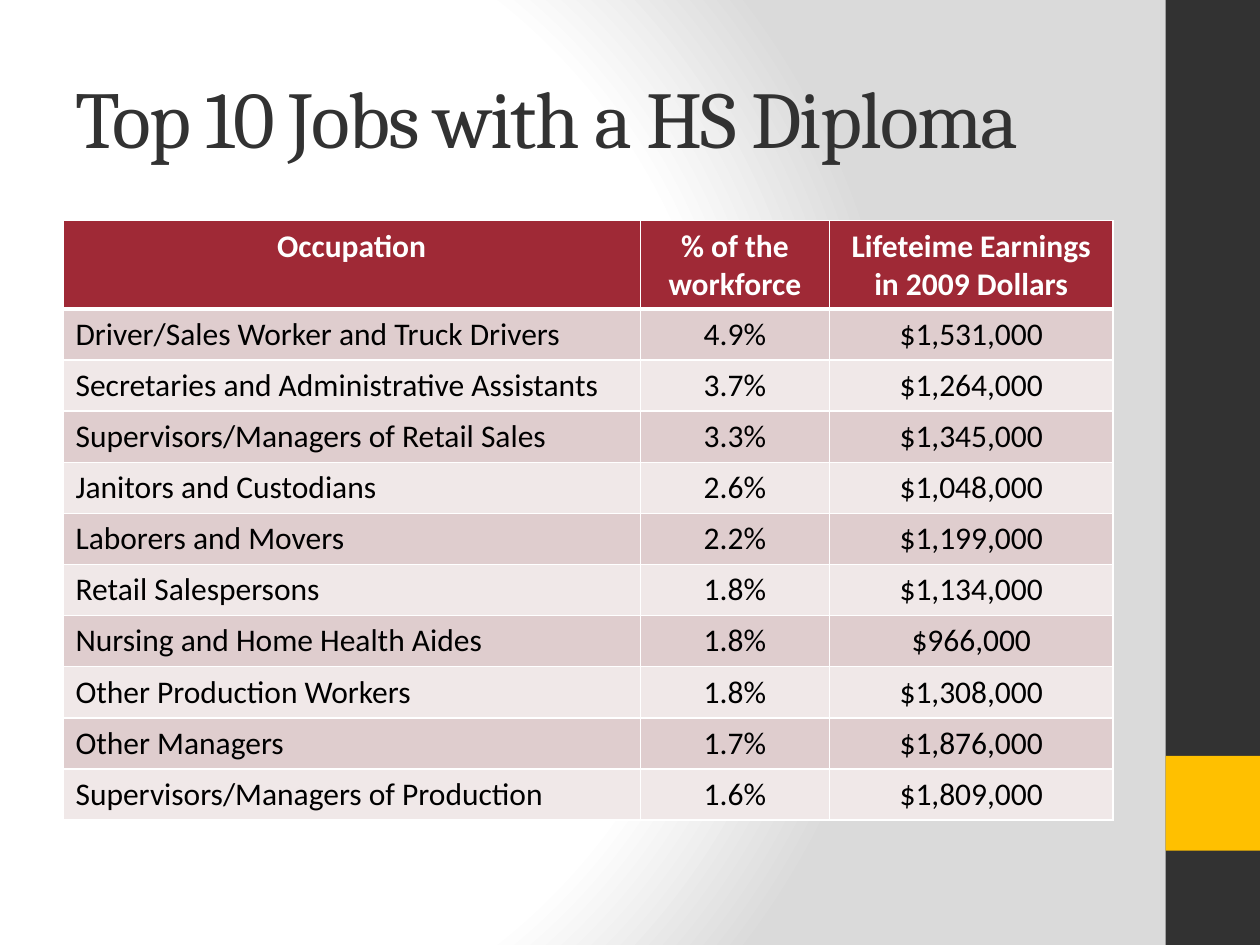
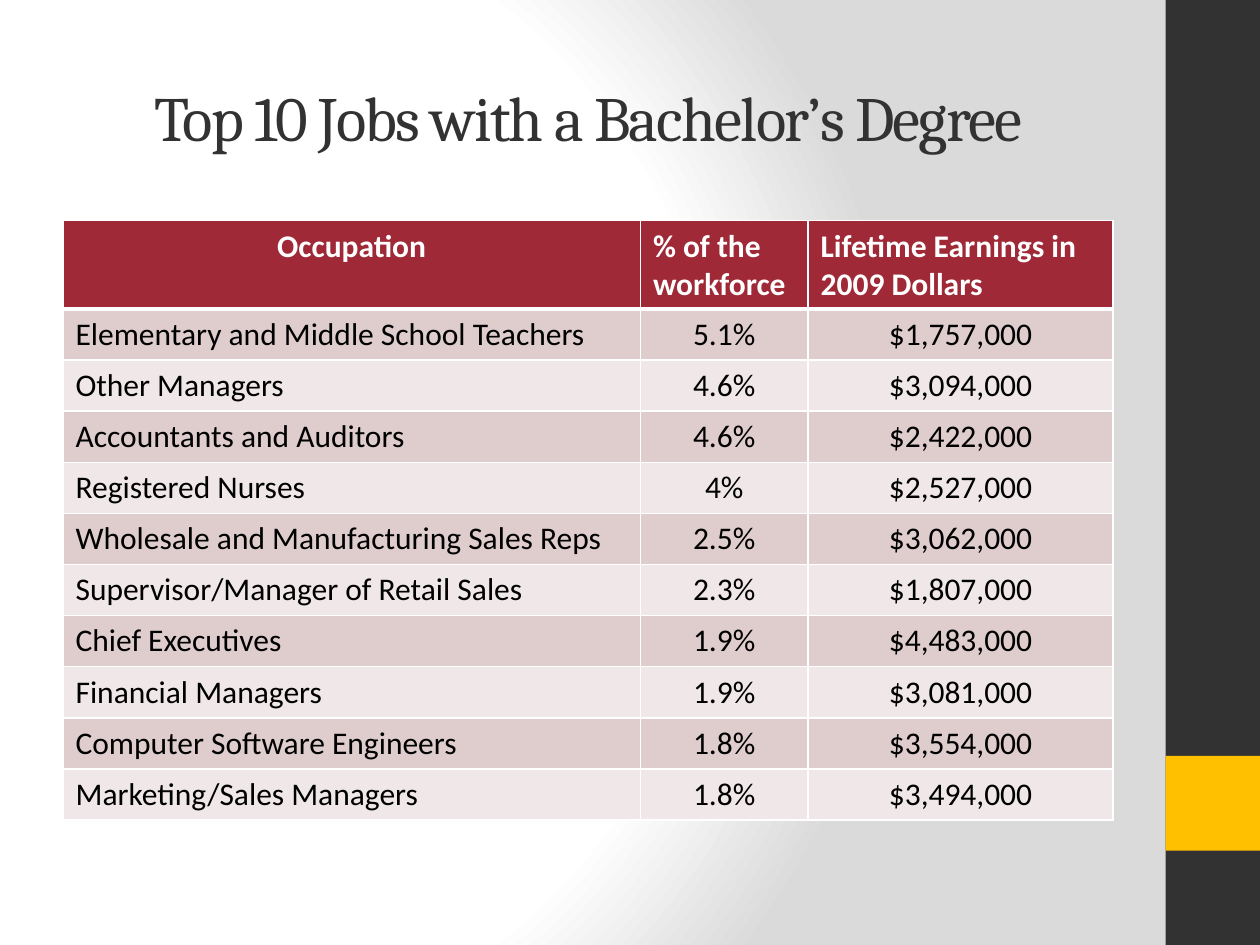
"""Build two slides that rank top jobs by level of schooling."""
from dataclasses import dataclass

from lxml import etree
from pptx import Presentation
from pptx.dml.color import RGBColor
from pptx.enum.shapes import MSO_SHAPE
from pptx.enum.text import MSO_ANCHOR, PP_ALIGN
from pptx.oxml import parse_xml
from pptx.oxml.ns import nsdecls, qn
from pptx.util import Cm, Pt

RECT = MSO_SHAPE.RECTANGLE
LEFT, MID = PP_ALIGN.LEFT, PP_ALIGN.CENTER
HALF = MSO_ANCHOR.MIDDLE

HUES = {
    "dark": "323232", "gold": "FFC000", "white": "FFFFFF", "gray": "DADADA",
    "head": "9F2936", "odd": "DFCDCE", "even": "F0E8E8", "black": "000000",
}
STOPS = ((0, "white"), (75, "white"), (100, "gray"))
EDGE, TOP, HEAD_TALL, ROW_TALL = 1.27, 4.45, 1.78, 1.03


@dataclass(frozen=True)
class Band:
    top: float
    tall: float
    hue: str


@dataclass(frozen=True)
class Page:
    title: str
    size: int
    align: PP_ALIGN
    heads: tuple[str, str, str]
    head_align: PP_ALIGN
    wide: tuple[float, float, float]
    jobs: tuple[tuple[str, str, str], ...]


BANDS = (Band(0, 19.05, "dark"), Band(15.24, 1.91, "gold"))

PAGES = (
    Page(
        "Top 10 Jobs with a HS Diploma", 46, LEFT,
        ("Occupation", "% of the workforce", "Lifeteime Earnings in 2009 Dollars"),
        MID, (11.64, 3.81, 5.72),
        (
            ("Driver/Sales Worker and Truck Drivers", "4.9%", "$1,531,000"),
            ("Secretaries and Administrative Assistants", "3.7%", "$1,264,000"),
            ("Supervisors/Managers of Retail Sales", "3.3%", "$1,345,000"),
            ("Janitors and Custodians", "2.6%", "$1,048,000"),
            ("Laborers and Movers", "2.2%", "$1,199,000"),
            ("Retail Salespersons", "1.8%", "$1,134,000"),
            ("Nursing and Home Health Aides", "1.8%", "$966,000"),
            ("Other Production Workers", "1.8%", "$1,308,000"),
            ("Other Managers", "1.7%", "$1,876,000"),
            ("Supervisors/Managers of Production", "1.6%", "$1,809,000"),
        ),
    ),
    Page(
        "Top 10 Jobs with a Bachelor’s Degree", 36, MID,
        ("Occupation", "% of the workforce", "Lifetime Earnings in 2009 Dollars"),
        LEFT, (11.64, 3.38, 6.15),
        (
            ("Elementary and Middle School Teachers", "5.1%", "$1,757,000"),
            ("Other Managers", "4.6%", "$3,094,000"),
            ("Accountants and Auditors", "4.6%", "$2,422,000"),
            ("Registered Nurses", "4%", "$2,527,000"),
            ("Wholesale and Manufacturing Sales Reps", "2.5%", "$3,062,000"),
            ("Supervisor/Manager of Retail Sales", "2.3%", "$1,807,000"),
            ("Chief Executives", "1.9%", "$4,483,000"),
            ("Financial Managers", "1.9%", "$3,081,000"),
            ("Computer Software Engineers", "1.8%", "$3,554,000"),
            ("Marketing/Sales Managers", "1.8%", "$3,494,000"),
        ),
    ),
)


def tint(hue: str) -> RGBColor:
    return RGBColor.from_string(HUES[hue])


def set_back(master) -> None:
    fill = master.background.fill
    fill.solid()
    stops = "".join(
        f'<a:gs pos="{pos * 1000}"><a:srgbClr val="{HUES[hue]}"/></a:gs>'
        for pos, hue in STOPS
    )
    grad = parse_xml(
        f'<a:gradFill {nsdecls("a")} rotWithShape="1"><a:gsLst>{stops}</a:gsLst>'
        '<a:path path="circle"><a:fillToRect l="20000" t="50000" r="100000" b="50000"/>'
        "</a:path></a:gradFill>"
    )
    solid = next(master.element.iter(qn("a:solidFill")))
    solid.getparent().replace(solid, grad)


def add_band(slide, band: Band) -> None:
    box = slide.shapes.add_shape(RECT, Cm(23.5), Cm(band.top), Cm(1.9), Cm(band.tall))
    box.shadow.inherit = False
    box.fill.solid()
    box.fill.fore_color.rgb = tint(band.hue)
    box.line.fill.background()


def style(para, face: str, size: int, hue: str, align: PP_ALIGN, bold: bool = False) -> None:
    para.alignment = align
    font = para.font
    font.name, font.size, font.bold = face, Pt(size), bold
    font.color.rgb = tint(hue)


def add_title(slide, page: Page) -> None:
    box = slide.shapes.add_textbox(Cm(EDGE), Cm(0.76), Cm(sum(page.wide)), Cm(3.18))
    frame = box.text_frame
    frame.word_wrap = True
    frame.vertical_anchor = HALF
    para = frame.paragraphs[0]
    run = para.add_run()
    run.text = page.title
    run._r.get_or_add_rPr().set("spc", "-100")
    style(para, "Cambria", page.size, "dark", page.align)


def add_rules(cell, row: int) -> None:
    props = cell._tc.get_or_add_tcPr()
    thick = {"lnT": 3 if row == 1 else 1, "lnB": 3 if row == 0 else 1}
    for side in ("lnL", "lnR", "lnT", "lnB"):
        line = etree.SubElement(props, qn(f"a:{side}"), w=str(Pt(thick.get(side, 1))))
        solid = etree.SubElement(line, qn("a:solidFill"))
        etree.SubElement(solid, qn("a:srgbClr"), val=HUES["white"])


def add_jobs(slide, page: Page) -> None:
    rows = (page.heads, *page.jobs)
    tall = HEAD_TALL + ROW_TALL * len(page.jobs)
    frame = slide.shapes.add_table(
        len(rows), len(page.wide), Cm(EDGE), Cm(TOP), Cm(sum(page.wide)), Cm(tall)
    )
    table = frame.table
    for col, wide in zip(table.columns, page.wide):
        col.width = Cm(wide)
    for r, texts in enumerate(rows):
        head = r == 0
        table.rows[r].height = Cm(HEAD_TALL if head else ROW_TALL)
        back = "head" if head else "odd" if r % 2 else "even"
        first = MID if head else LEFT
        rest = page.head_align if head else MID
        for c, text in enumerate(texts):
            cell = table.cell(r, c)
            cell.text = text
            add_rules(cell, r)
            cell.fill.solid()
            cell.fill.fore_color.rgb = tint(back)
            style(cell.text_frame.paragraphs[0], "Calibri", 18,
                  "white" if head else "black", rest if c else first, head)


def main() -> None:
    deck = Presentation()
    deck.slide_width, deck.slide_height = Cm(25.4), Cm(19.05)
    set_back(deck.slide_master)
    for page in PAGES:
        slide = deck.slides.add_slide(deck.slide_layouts[6])
        for band in BANDS:
            add_band(slide, band)
        add_title(slide, page)
        add_jobs(slide, page)
    deck.save("out.pptx")


if __name__ == "__main__":
    main()
